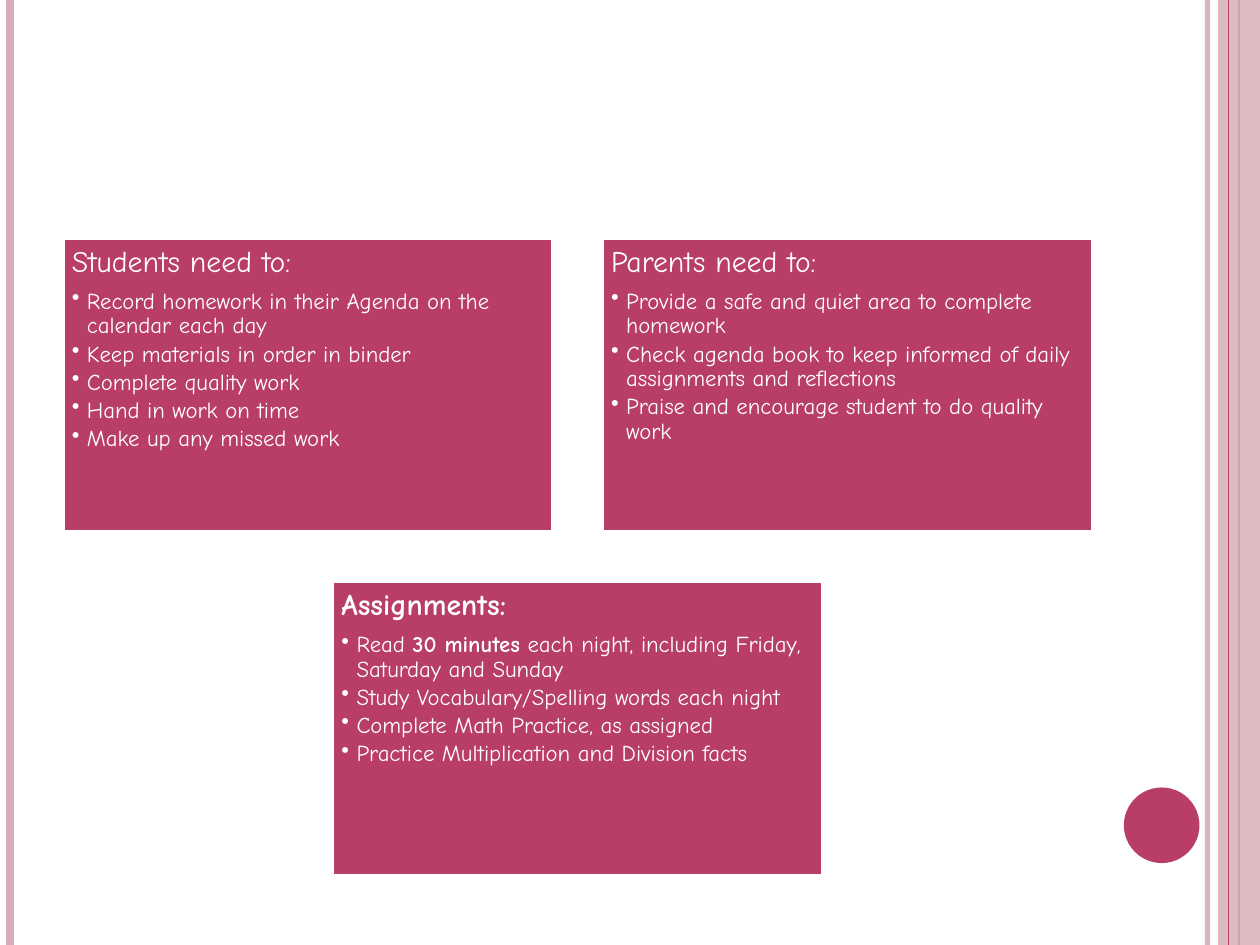
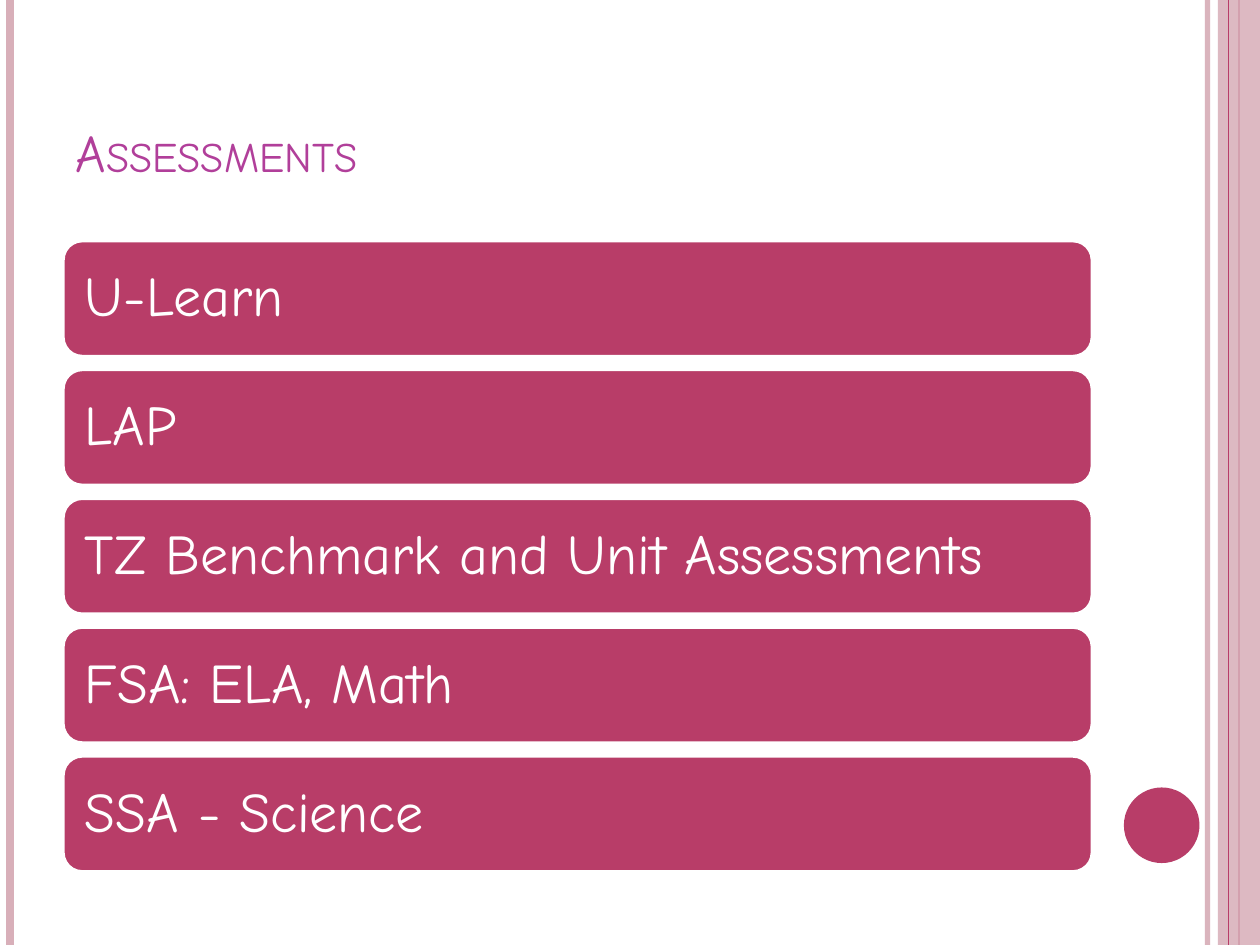
from dataclasses import dataclass

from lxml.etree import SubElement
from pptx import Presentation
from pptx.dml.color import RGBColor
from pptx.enum.shapes import MSO_CONNECTOR, MSO_SHAPE
from pptx.enum.text import MSO_ANCHOR, MSO_AUTO_SIZE, PP_ALIGN
from pptx.oxml.ns import qn
from pptx.util import Inches, Pt

COLORS = {"berry": "B83D68", "rose": "D8AFB9", "violet": "B13F9A", "white": "FFFFFF"}
FONT = "Comic Neue"
COLUMNS, ROWS = 100, 75
WIDTH, HEIGHT = Inches(10), Inches(7.5)
LAYOUT_TITLE_ONLY, LAYOUT_BLANK = 5, 6

CARDS = [
    ("Students need to:", [
        "Record homework in their Agenda on the calendar each day",
        "Keep materials in order in binder",
        "Complete quality work",
        "Hand in work on time",
        "Make up any missed work",
    ]),
    ("Parents need to:", [
        "Provide a safe and quiet area to complete homework",
        "Check agenda book to keep informed of daily assignments and reflections",
        "Praise and encourage student to do quality work",
    ]),
    ("*Assignments:*", [
        "Read *30 minutes* each night, including Friday, Saturday and Sunday",
        "Study Vocabulary/Spelling words each night",
        "Complete Math Practice, as assigned",
        "Practice Multiplication and Division facts",
    ]),
]
ASSESSMENTS = ["U-Learn", "LAP", "TZ Benchmark and Unit Assessments",
               "FSA: ELA, Math", "SSA - Science"]


@dataclass
class Box:
    """A rectangle in grid columns and rows."""
    left: float
    top: float
    width: float
    height: float

    def lengths(self):
        """Return left, top, width and height as slide lengths."""
        return (across(self.left), down(self.top), across(self.width), down(self.height))


TITLE_BOX = Box(5, 3, 81.7, 12.5)
CARD_BOX = Box(5, 18.9, 81.7, 50.6)
BAR_BOX = Box(5, 19.1, 81.7, 50.1)


def across(columns):
    """Turn grid columns into a length."""
    return int(WIDTH * columns / COLUMNS)


def down(rows):
    """Turn grid rows into a length."""
    return int(HEIGHT * rows / ROWS)


def rgb(name):
    """Look up a named colour."""
    return RGBColor.from_string(COLORS[name])


def set_opacity(shape, percent):
    """Make the first colour of a shape partly transparent."""
    color = next(shape._element.spPr.iter(qn("a:srgbClr")))
    SubElement(color, qn("a:alpha")).set("val", str(percent * 1000))


def add_rule(page, column, color, weight):
    """Draw a full-height vertical line at a grid column."""
    rule = page.shapes.add_connector(
        MSO_CONNECTOR.STRAIGHT, across(column), 0, across(column), HEIGHT)
    rule.line.color.rgb = rgb(color)
    rule.line.width = Pt(weight)
    SubElement(rule._element.spPr, qn("a:effectLst"))
    return rule


def add_block(page, kind, box, color, outline=None):
    """Draw a flat filled shape, with an outline on request."""
    block = page.shapes.add_shape(kind, *box.lengths())
    block.shadow.inherit = False
    block.fill.solid()
    block.fill.fore_color.rgb = rgb(color)
    if outline:
        block.line.color.rgb = rgb(outline)
        block.line.width = Pt(2)
    else:
        block.line.fill.background()
    return block


def set_frame(frame, inset, anchor):
    """Set wrapping, margins and anchor of a text frame."""
    frame.word_wrap = True
    frame.auto_size = MSO_AUTO_SIZE.NONE
    frame.vertical_anchor = anchor
    frame.margin_left = frame.margin_right = Inches(inset)
    frame.margin_top = frame.margin_bottom = Inches(inset)


def write(para, text, size, color="white", spacing=0.9, after=0, bullet=False, small_caps=False):
    """Fill a paragraph; text between asterisks is bold."""
    para.alignment = PP_ALIGN.LEFT
    para.line_spacing = spacing
    para.space_after = Pt(after)
    if bullet:
        para.level = 1
        props = para._p.get_or_add_pPr()
        props.set("marL", str(Inches(0.12)))
        props.set("indent", str(-Inches(0.12)))
        SubElement(props, qn("a:buChar")).set("char", "•")
    for index, piece in enumerate(text.split("*")):
        if piece:
            span = para.add_run()
            span.text = piece
            span.font.name = FONT
            span.font.size = Pt(size)
            span.font.bold = index % 2 == 1
            span.font.color.rgb = rgb(color)
            if small_caps:
                span._r.get_or_add_rPr().set("cap", "small")


def add_page(deck, layout):
    """Add a slide with the shared bands and circle."""
    page = deck.slides.add_slide(deck.slide_layouts[layout])
    set_opacity(add_rule(page, 95.83, "rose", 3), 93)
    add_rule(page, 0.83, "rose", 4.5)
    add_rule(page, 98.33, "berry", 1.5)
    set_opacity(add_block(page, MSO_SHAPE.RECTANGLE, Box(96.67, 0, 3.33, ROWS), "rose"), 87)
    add_rule(page, 97.5, "berry", 0.75)
    add_block(page, MSO_SHAPE.OVAL, Box(89.2, 62.5, 6, 6), "berry")
    return page


def set_title(page, text, box):
    """Place and format the title placeholder."""
    title = page.shapes.title
    title.left, title.top, title.width, title.height = box.lengths()
    set_frame(title.text_frame, 0.1, MSO_ANCHOR.BOTTOM)
    write(title.text_frame.paragraphs[0], text, 30, "violet", spacing=1, small_caps=True)


def add_card(page, heading, points, box):
    """Draw a card with a heading and bullet points."""
    card = add_block(page, MSO_SHAPE.RECTANGLE, box, "berry", "white")
    frame = card.text_frame
    set_frame(frame, 0.07, MSO_ANCHOR.TOP)
    write(frame.paragraphs[0], heading, 17, after=6)
    for point in points:
        write(frame.add_paragraph(), point, 13, after=2, bullet=True)


def add_cards(page, cards, box):
    """Lay out cards two to a row and centre a short last row."""
    per_row = 2
    width = box.width / 2.1
    height, gap = width * 0.6, width * 0.1
    for start in range(0, len(cards), per_row):
        row = cards[start:start + per_row]
        row_width = len(row) * width + (len(row) - 1) * gap
        left = box.left + (box.width - row_width) / 2
        top = box.top + start // per_row * (height + gap)
        for index, (heading, points) in enumerate(row):
            add_card(page, heading, points,
                     Box(left + index * (width + gap), top, width, height))


def add_bars(page, labels, box):
    """Stack rounded bars with gaps of a ninth of their height."""
    height = box.height / (len(labels) + (len(labels) - 1) / 9)
    for index, label in enumerate(labels):
        top = box.top + index * height * 10 / 9
        bar = add_block(page, MSO_SHAPE.ROUNDED_RECTANGLE,
                        Box(box.left, top, box.width, height), "berry", "white")
        set_frame(bar.text_frame, 0.13, MSO_ANCHOR.MIDDLE)
        write(bar.text_frame.paragraphs[0], label, 32)


def main():
    """Build and save the deck."""
    deck = Presentation()
    deck.slide_width, deck.slide_height = WIDTH, HEIGHT
    add_cards(add_page(deck, LAYOUT_BLANK), CARDS, CARD_BOX)
    page = add_page(deck, LAYOUT_TITLE_ONLY)
    set_title(page, "Assessments", TITLE_BOX)
    add_bars(page, ASSESSMENTS, BAR_BOX)
    deck.save("out.pptx")


if __name__ == "__main__":
    main()
